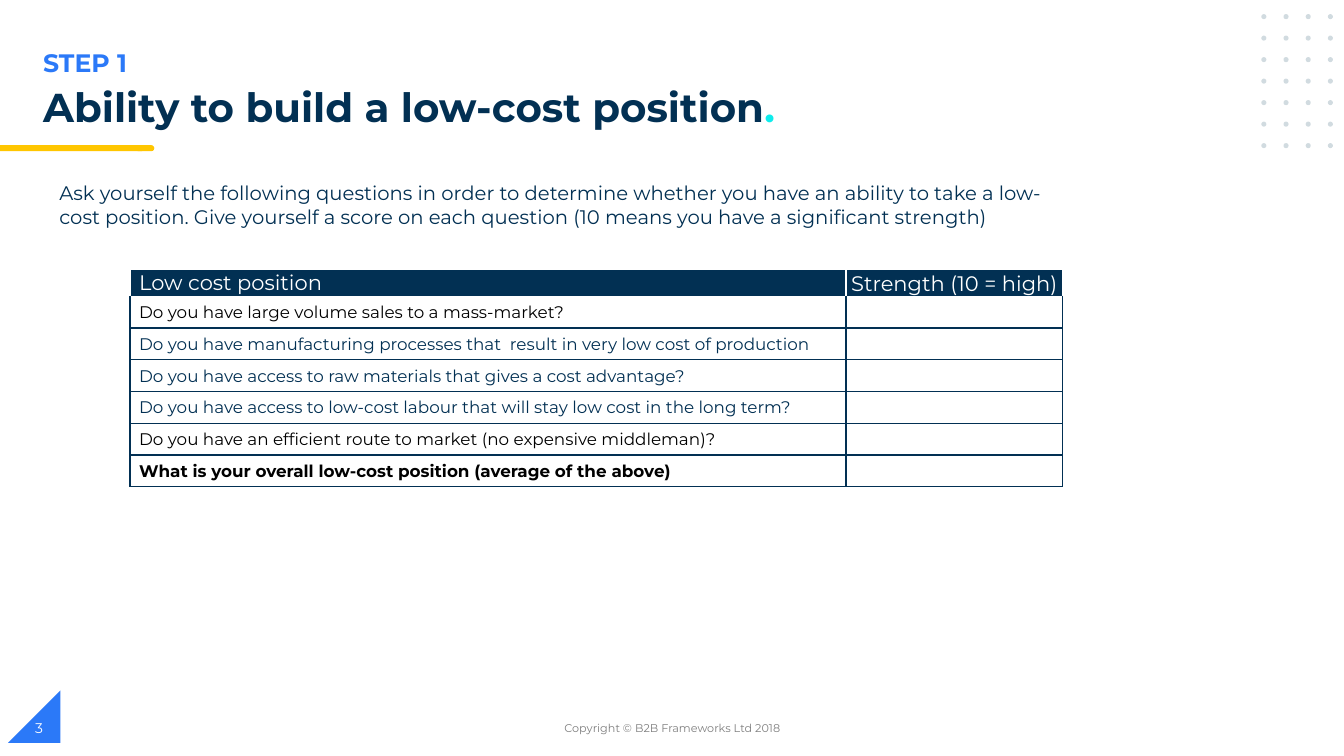
from dataclasses import dataclass
from itertools import product

from pptx import Presentation
from pptx.dml.color import RGBColor
from pptx.enum.shapes import MSO_SHAPE
from pptx.enum.text import MSO_ANCHOR, PP_ALIGN
from pptx.oxml import parse_xml
from pptx.oxml.ns import nsdecls, qn
from pptx.util import Inches, Pt

TRIANGLE, ELLIPSE = MSO_SHAPE.RIGHT_TRIANGLE, MSO_SHAPE.OVAL
RECTANGLE, TERMINATOR = MSO_SHAPE.RECTANGLE, MSO_SHAPE.FLOWCHART_TERMINATOR
TOP, MIDDLE, BOTTOM = MSO_ANCHOR.TOP, MSO_ANCHOR.MIDDLE, MSO_ANCHOR.BOTTOM
LEFT, CENTER = PP_ALIGN.LEFT, PP_ALIGN.CENTER

FONT = "Montserrat"
NAVY, BLUE, YELLOW, CYAN = "023053", "2B79F8", "FFC600", "0EECEC"
WHITE, BLACK, GREY, DOT_GREY = "FFFFFF", "000000", "7F7F7F", "D1DBE0"

DOT_ROWS, DOT_COLUMNS = 7, 4
COLUMN_WIDTHS = (7.1, 2.15)
HEADER_HEIGHT, BODY_HEIGHT = 0.27, 1.89


@dataclass(frozen=True)
class Box:
    left: float
    top: float
    width: float
    height: float

    def lengths(self) -> tuple:
        return tuple(Inches(n) for n in (self.left, self.top, self.width, self.height))


@dataclass(frozen=True)
class Label:
    box: Box
    text: str
    size: float
    color: str
    bold: bool = False
    align: PP_ALIGN = LEFT
    anchor: MSO_ANCHOR = TOP


@dataclass(frozen=True)
class Question:
    text: str
    color: str = NAVY
    bold: bool = False


LABELS = (
    Label(Box(0.33, 0.42, 6.69, 0.4), "STEP 1", 18, BLUE, bold=True),
    Label(
        Box(0.49, 1.75, 10.18, 0.57),
        "Ask yourself the following questions in order to determine whether you have "
        "an ability to take a low-cost position. Give yourself a score on each question "
        "(10 means you have a significant strength)",
        14, NAVY,
    ),
    Label(Box(4.42, 7.02, 4.5, 0.4), "Copyright © B2B Frameworks Ltd 2018",
          8, GREY, align=CENTER, anchor=MIDDLE),
    Label(Box(0.25, 7.02, 3, 0.4), "3", 10, WHITE, anchor=MIDDLE),
)
TITLE = Label(Box(0.33, 0.82, 8.76, 0.56), "Ability to build a low-cost position",
              28.8, NAVY, bold=True)

QUESTIONS = (
    Question("Do you have large volume sales to a mass-market?", BLACK),
    Question("Do you have manufacturing processes that  result in very low cost of production"),
    Question("Do you have access to raw materials that gives a cost advantage?"),
    Question("Do you have access to low-cost labour that will stay low cost in the long term?"),
    Question("Do you have an efficient route to market (no expensive middleman)?", BLACK),
    Question("What is your overall low-cost position (average of the above)", BLACK, True),
)


def rgb(color: str) -> RGBColor:
    return RGBColor.from_string(color)


def style_paragraph(paragraph, size: float, color: str, bold: bool = False) -> None:
    paragraph.font.name = FONT
    paragraph.font.size = Pt(size)
    paragraph.font.bold = bold
    paragraph.font.color.rgb = rgb(color)


def add_filled_shape(slide, kind: MSO_SHAPE, box: Box, color: str):
    shape = slide.shapes.add_shape(kind, *box.lengths())
    shape.shadow.inherit = False
    shape.fill.solid()
    shape.fill.fore_color.rgb = rgb(color)
    shape.line.fill.background()
    return shape


def add_label(slide, label: Label):
    """Add a text box and return its paragraph."""
    frame = slide.shapes.add_textbox(*label.box.lengths()).text_frame
    frame.word_wrap = True
    frame.vertical_anchor = label.anchor
    paragraph = frame.paragraphs[0]
    paragraph.add_run().text = label.text
    paragraph.alignment = label.align
    style_paragraph(paragraph, label.size, label.color, label.bold)
    return paragraph


def add_title(slide) -> None:
    paragraph = add_label(slide, TITLE)
    paragraph.line_spacing = 0.9
    full_stop = paragraph.add_run()
    full_stop.text = "."
    full_stop.font.color.rgb = rgb(CYAN)


def add_decoration(slide) -> None:
    triangle = add_filled_shape(slide, TRIANGLE, Box(0.08, 6.85, 0.52, 0.52), BLUE)
    triangle._element.spPr.find(qn("a:xfrm")).set("flipH", "1")
    row_step = 1.28 / (DOT_ROWS - 1)
    for row, column in product(range(DOT_ROWS), range(DOT_COLUMNS)):
        box = Box(12.51 + 0.22 * column, 0.14 + row_step * row, 0.05, 0.05)
        add_filled_shape(slide, ELLIPSE, box, DOT_GREY)
    add_filled_shape(slide, TERMINATOR, Box(1.34, 1.44, 0.19, 0.06), YELLOW)
    add_filled_shape(slide, RECTANGLE, Box(0, 1.44, 1.41, 0.06), YELLOW)


def set_borders(cell, color: str, top_color: str) -> None:
    properties = cell._tc.get_or_add_tcPr()
    sides = (("lnL", color), ("lnR", color), ("lnT", top_color), ("lnB", color))
    for position, (side, side_color) in enumerate(sides):
        properties.insert(position, parse_xml(
            f'<a:{side} {nsdecls("a")} w="12700"><a:solidFill>'
            f'<a:srgbClr val="{side_color}"/></a:solidFill></a:{side}>'
        ))


def format_cell(cell, fill: str, border: str, top_border: str) -> None:
    cell.margin_left = cell.margin_right = cell.margin_top = Inches(0.01)
    cell.margin_bottom = 0
    cell.vertical_anchor = MIDDLE
    cell.fill.solid()
    cell.fill.fore_color.rgb = rgb(fill)
    set_borders(cell, border, top_border)


def write_cell(cell, text: str, size: float, color: str, bold: bool = False,
               indent: float = 0.08):
    paragraph = cell.text_frame.paragraphs[0]
    paragraph.add_run().text = text
    paragraph._p.get_or_add_pPr().set("marL", str(Inches(indent)))
    style_paragraph(paragraph, size, color, bold)
    return paragraph


def add_score_table(slide) -> None:
    box = Box(1.29, 2.67, sum(COLUMN_WIDTHS), HEADER_HEIGHT + BODY_HEIGHT)
    table = slide.shapes.add_table(
        len(QUESTIONS) + 1, len(COLUMN_WIDTHS), *box.lengths()).table
    for column, width in zip(table.columns, COLUMN_WIDTHS):
        column.width = Inches(width)
    for index, row in enumerate(table.rows):
        is_header = index == 0
        row.height = Inches(HEADER_HEIGHT if is_header else BODY_HEIGHT / len(QUESTIONS))
        for cell in row.cells:
            format_cell(cell, NAVY if is_header else WHITE,
                        WHITE if is_header else NAVY, WHITE if index < 2 else NAVY)

    write_cell(table.cell(0, 0), "Low cost position", 15, WHITE)
    strength = table.cell(0, 1)
    write_cell(strength, "Strength (10 = high)", 15, WHITE, indent=0).alignment = CENTER
    strength.vertical_anchor = BOTTOM
    for index, question in enumerate(QUESTIONS, start=1):
        write_cell(table.cell(index, 0), question.text, 12, question.color, question.bold)
        style_paragraph(table.cell(index, 1).text_frame.paragraphs[0], 12, NAVY)


def main() -> None:
    presentation = Presentation()
    presentation.slide_width, presentation.slide_height = Inches(13.33), Inches(7.5)
    slide = presentation.slides.add_slide(presentation.slide_layouts[6])
    add_decoration(slide)
    add_title(slide)
    for label in LABELS:
        add_label(slide, label)
    add_score_table(slide)
    presentation.save("out.pptx")


if __name__ == "__main__":
    main()
